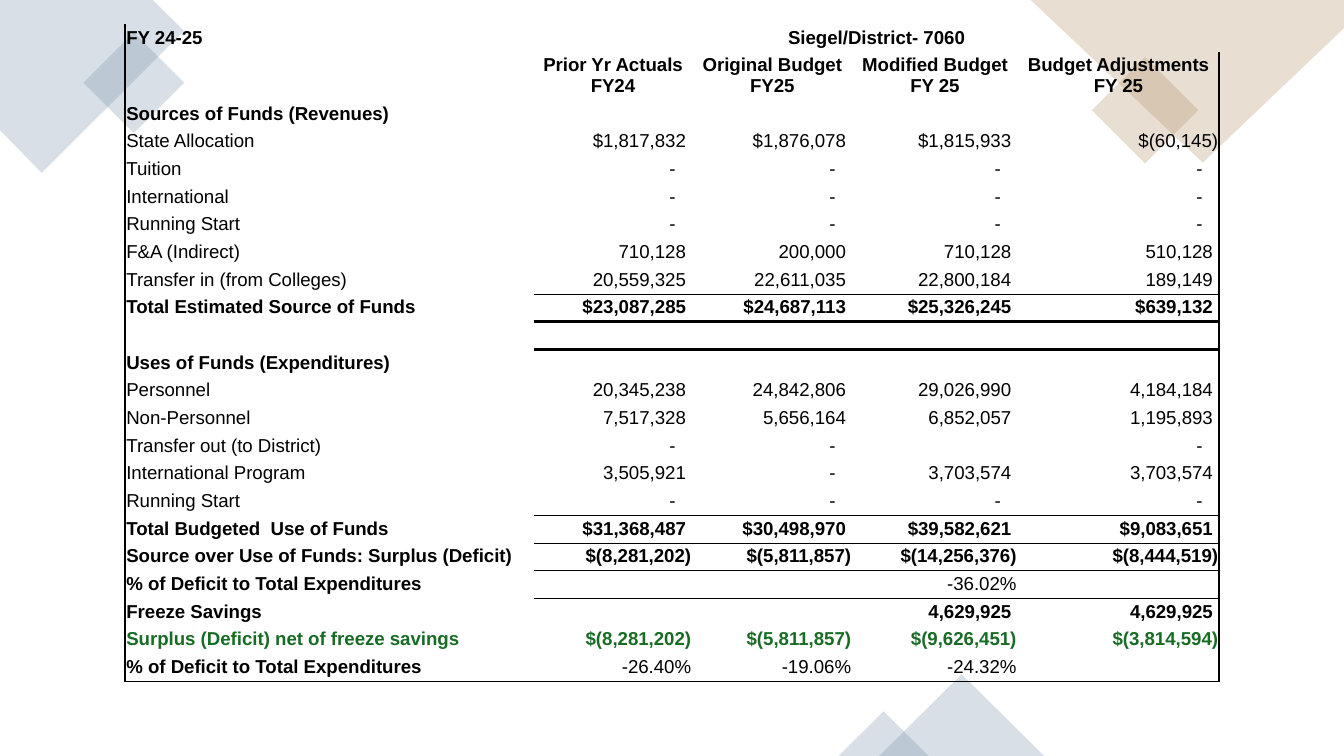
import pptx
import pptx.util
import pptx.dml.color
import pptx.enum.shapes
import pptx.enum.text
import pptx.oxml
import pptx.oxml.ns
from lxml import etree

Pt = pptx.util.Pt
RGBColor = pptx.dml.color.RGBColor
SHAPE = pptx.enum.shapes.MSO_SHAPE
ALIGN = pptx.enum.text.PP_ALIGN
qn = pptx.oxml.ns.qn

BLACK = RGBColor(0x00, 0x00, 0x00)
GREEN = RGBColor(0x18, 0x6C, 0x24)
BLUE = RGBColor(0x7E, 0x97, 0xAD)
TAN = RGBColor(0xB4, 0x93, 0x6D)

# Budget rows: style, label, one value per fiscal column
BUDGET = [
    ("heading", "FY 24-25", "Siegel/District- 7060", "", "", ""),
    ("heading", "", "Prior Yr Actuals\nFY24", "Original Budget\nFY25",
     "Modified Budget\nFY 25", "Budget Adjustments\nFY 25"),
    ("total", "Sources of Funds (Revenues)", "", "", "", ""),
    ("item", "State Allocation", "$1,817,832", "$1,876,078", "$1,815,933", "$(60,145)"),
    ("item", "Tuition", "-", "-", "-", "-"),
    ("item", "International", "-", "-", "-", "-"),
    ("item", "Running Start", "-", "-", "-", "-"),
    ("item", "F&A (Indirect)", "710,128", "200,000", "710,128", "510,128"),
    ("item", "Transfer in (from Colleges)", "20,559,325", "22,611,035", "22,800,184", "189,149"),
    ("total", "Total Estimated Source of Funds",
     "$23,087,285", "$24,687,113", "$25,326,245", "$639,132"),
    ("item", "", "", "", "", ""),
    ("total", "Uses of Funds (Expenditures)", "", "", "", ""),
    ("item", "Personnel", "20,345,238", "24,842,806", "29,026,990", "4,184,184"),
    ("item", "Non-Personnel", "7,517,328", "5,656,164", "6,852,057", "1,195,893"),
    ("item", "Transfer out (to District)", "-", "-", "", "-"),
    ("item", "International Program", "3,505,921", "-", "3,703,574", "3,703,574"),
    ("item", "Running Start", "-", "-", "-", "-"),
    ("total", "Total Budgeted  Use of Funds",
     "$31,368,487", "$30,498,970", "$39,582,621", "$9,083,651"),
    ("total", "Source over Use of Funds: Surplus (Deficit)",
     "$(8,281,202)", "$(5,811,857)", "$(14,256,376)", "$(8,444,519)"),
    ("percent", "% of Deficit to Total Expenditures", "", "", "-36.02%", ""),
    ("total", "Freeze Savings", "", "", "4,629,925", "4,629,925"),
    ("net", "Surplus (Deficit) net of freeze savings",
     "$(8,281,202)", "$(5,811,857)", "$(9,626,451)", "$(3,814,594)"),
    ("percent", "% of Deficit to Total Expenditures", "-26.40%", "-19.06%", "-24.32%", ""),
]
# Rules under the value columns: row index -> width
RULES = {8: 0.5, 9: 2, 16: 0.5, 18: 1}
COLUMN_WIDTHS = [218.9, 85, 85.7, 88.6, 108]
ROW_HEIGHT, HEADER_HEIGHT = 14.83, 25.9
TABLE_LEFT, TABLE_TOP = 67, 13
LAST_ROW, LAST_COLUMN = len(BUDGET) - 1, len(COLUMN_WIDTHS) - 1

# Corner decoration, in points
POLYGONS = [
    (BLUE, [(82, 0), (0, 0), (0, 69.8), (22.4, 92.6), (98.6, 16.6)]),
    (TAN, [(720, 0), (552.2, 0), (644.4, 87.1), (720, 15.1)]),
]
ACCENTS = [
    (BLUE, SHAPE.RECTANGLE, 315, (52.6, 25.2, 38.2, 38.2)),
    (TAN, SHAPE.RECTANGLE, 315, (593.3, 38.9, 40.3, 40.3)),
    (BLUE, SHAPE.ISOSCELES_TRIANGLE, 0, (470.9, 361.2, 88.6, 43.9)),
    (BLUE, SHAPE.ISOSCELES_TRIANGLE, 0, (449.3, 381.1, 48.2, 23.9)),
]


def tint(shape, color):
    shape.shadow.inherit = False
    shape.fill.solid()
    shape.fill.fore_color.rgb = color
    shape.line.fill.background()
    shade = shape.fill._xPr.find(".//" + qn("a:srgbClr"))
    etree.SubElement(shade, qn("a:alpha"), val="30000")


def draw_border(cell, side, width):
    edge = etree.SubElement(cell._tc.get_or_add_tcPr(), qn("a:ln" + side),
                            w=str(int(Pt(width))))
    ink = etree.SubElement(etree.SubElement(edge, qn("a:solidFill")), qn("a:srgbClr"))
    ink.set("val", str(BLACK))


def borders_of(row, column):
    widths = {}
    if column == 0:
        widths["L"] = 1
    if column == LAST_COLUMN and row > 0:
        widths["R"] = 1
    if column > 0 and row - 1 in RULES:
        widths["T"] = RULES[row - 1]
    if row == LAST_ROW:
        widths["B"] = 1
    elif column > 0 and row in RULES:
        widths["B"] = RULES[row]
    return widths


def right_margin(style, column, value):
    """Leave room for a closing bracket; dashes sit further in."""
    if column == 0 or style == "heading" or value.endswith((")", "%")):
        return 0.7
    return 9 if value == "-" else 3.5


def fill_cell(cell, row, column, style, value):
    for side, width in borders_of(row, column).items():
        draw_border(cell, side, width)
    cell.fill.background()
    layout = {
        "margin_left": Pt(0.7), "margin_top": Pt(0.7), "margin_bottom": Pt(2),
        "margin_right": Pt(right_margin(style, column, value)),
        "vertical_anchor": pptx.enum.text.MSO_ANCHOR.BOTTOM,
    }
    for name, setting in layout.items():
        setattr(cell, name, setting)
    line = cell.text_frame.paragraphs[0]
    if not value:
        line._p.get_or_add_endParaRPr().set("sz", "1000")
        return
    line.text = value
    if column > 0:
        line.alignment = ALIGN.CENTER if style == "heading" else ALIGN.RIGHT
    look = {
        "name": "Arial", "size": Pt(10),
        "bold": style in ("heading", "total", "net") or (style == "percent" and column == 0),
    }
    for run in line.runs:
        for name, setting in look.items():
            setattr(run.font, name, setting)
        run.font.color.rgb = GREEN if style == "net" else BLACK


def main():
    deck = pptx.Presentation()
    deck.slide_width, deck.slide_height = Pt(720), Pt(405)
    slide = deck.slides.add_slide(deck.slide_layouts[6])

    # Decoration
    for color, points in POLYGONS:
        corners = [(Pt(x), Pt(y)) for x, y in points]
        outline = slide.shapes.build_freeform(*corners[0])
        outline.add_line_segments(corners[1:], close=True)
        tint(outline.convert_to_shape(), color)
    for color, kind, angle, box in ACCENTS:
        accent = slide.shapes.add_shape(kind, *map(Pt, box))
        accent.rotation = angle
        tint(accent, color)

    # Budget table
    heights = [HEADER_HEIGHT if row == 1 else ROW_HEIGHT for row in range(len(BUDGET))]
    budget = slide.shapes.add_table(
        len(BUDGET), len(COLUMN_WIDTHS), Pt(TABLE_LEFT), Pt(TABLE_TOP),
        Pt(sum(COLUMN_WIDTHS)), Pt(sum(heights))).table
    budget.first_row = budget.horz_banding = False
    # Style without fills or grid
    style_id = budget._tbl.tblPr.find(qn("a:tableStyleId"))
    style_id.text = "{2D5ABB26-0587-4C30-8999-92F81FD0307C}"
    for column, width in zip(budget.columns, COLUMN_WIDTHS):
        column.width = Pt(width)
    for row, height in zip(budget.rows, heights):
        row.height = Pt(height)
    for row, (style, *values) in enumerate(BUDGET):
        for column, value in enumerate(values):
            fill_cell(budget.cell(row, column), row, column, style, value)
    budget.cell(0, 1).merge(budget.cell(0, LAST_COLUMN))

    deck.save("out.pptx")


if __name__ == "__main__":
    main()
